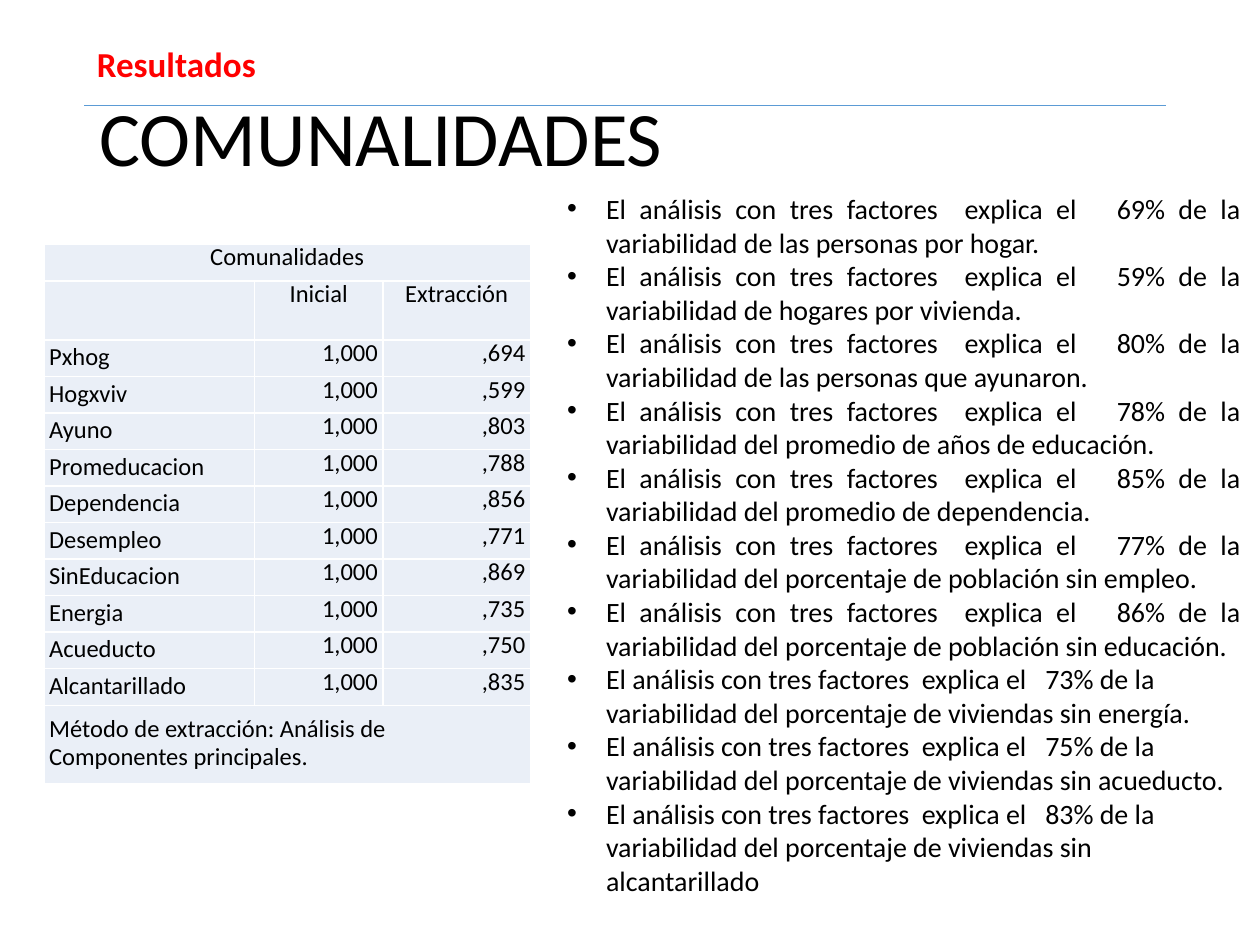
from lxml import etree
from pptx import Presentation
from pptx.dml.color import RGBColor
from pptx.enum.shapes import MSO_CONNECTOR
from pptx.enum.text import MSO_ANCHOR, MSO_AUTO_SIZE, PP_ALIGN
from pptx.oxml.ns import qn
from pptx.util import Inches, Pt

LEFT, CENTER, RIGHT, JUSTIFY = PP_ALIGN.LEFT, PP_ALIGN.CENTER, PP_ALIGN.RIGHT, PP_ALIGN.JUSTIFY
TOP, MIDDLE = MSO_ANCHOR.TOP, MSO_ANCHOR.MIDDLE
NO_FIT = MSO_AUTO_SIZE.NONE
STRAIGHT = MSO_CONNECTOR.STRAIGHT

FONT = "Calibri"
BLACK, RED, RULE_BLUE, CELL_BLUE = "000000", "FF0000", "5B9BD5", "EAEFF7"

COMMUNALITIES = [
    ("Pxhog", ",694"),
    ("Hogxviv", ",599"),
    ("Ayuno", ",803"),
    ("Promeducacion", ",788"),
    ("Dependencia", ",856"),
    ("Desempleo", ",771"),
    ("SinEducacion", ",869"),
    ("Energia", ",735"),
    ("Acueducto", ",750"),
    ("Alcantarillado", ",835"),
]
INITIAL = "1,000"
METHOD = "Método de extracción: Análisis de Componentes principales."

FINDING = "El análisis con tres factores  explica el   {}% de la variabilidad {}"
FINDINGS = [
    (69, "de las personas por hogar."),
    (59, "de hogares por vivienda."),
    (80, "de las personas que ayunaron."),
    (78, "del promedio de años de educación."),
    (85, "del promedio de dependencia."),
    (77, "del porcentaje de población sin empleo."),
    (86, "del porcentaje de población sin educación."),
    (73, "del porcentaje de viviendas sin energía."),
    (75, "del porcentaje de viviendas sin acueducto."),
    (83, "del porcentaje de viviendas sin alcantarillado"),
]
JUSTIFIED_FINDINGS = 7


def color(hex_string):
    return RGBColor.from_string(hex_string)


def place(shape, left, top, width, height):
    shape.left, shape.top = Inches(left), Inches(top)
    shape.width, shape.height = Inches(width), Inches(height)


def format_paragraph(paragraph, size, hex_string=BLACK, align=LEFT, bold=False):
    paragraph.alignment = align
    font = paragraph.font
    font.name, font.size, font.bold = FONT, Pt(size), bold
    font.color.rgb = color(hex_string)


def add_header(slide, left, top, width, height):
    """Section label with the rule below it."""
    label = slide.shapes.add_textbox(Inches(left), Inches(top), Inches(1.47), Inches(height))
    label.text_frame.word_wrap = False
    label.text_frame.text = "Resultados"
    format_paragraph(label.text_frame.paragraphs[0], 20, RED, bold=True)

    rule_top = Inches(top + height + 0.11)
    rule = slide.shapes.add_connector(
        STRAIGHT, Inches(left + width), rule_top, Inches(left), rule_top)
    rule.line.color.rgb = color(RULE_BLUE)
    rule.line.width = Pt(0.5)
    etree.SubElement(rule._element.spPr, qn("a:effectLst"))


def fill_title(title, left, top, width, height):
    place(title, left, top, width, height)
    frame = title.text_frame
    frame.text = "COMUNALIDADES"
    frame.vertical_anchor = MIDDLE
    frame.auto_size = NO_FIT
    paragraph = frame.paragraphs[0]
    format_paragraph(paragraph, 44)
    paragraph.line_spacing = 0.9


def write_cell(cell, text, align, anchor):
    cell.fill.solid()
    cell.fill.fore_color.rgb = color(CELL_BLUE)
    cell.margin_left = cell.margin_right = Inches(0.04)
    cell.margin_top = cell.margin_bottom = 0
    cell.vertical_anchor = anchor
    cell.text = text
    paragraph = cell.text_frame.paragraphs[0]
    format_paragraph(paragraph, 14, align=align)
    paragraph.line_spacing = Pt(16)


def add_communalities_table(slide, left, top):
    column_widths = [1.67, 1.02, 1.17]
    row_heights = [0.29, 0.47] + [0.29] * len(COMMUNALITIES) + [0.62]
    table = slide.shapes.add_table(
        len(row_heights), len(column_widths), Inches(left), Inches(top),
        Inches(sum(column_widths)), Inches(sum(row_heights))).table
    table.first_row = table.horz_banding = False
    for column, width in zip(table.columns, column_widths):
        column.width = Inches(width)
    for row, height in zip(table.rows, row_heights):
        row.height = Inches(height)

    last_row, last_column = len(row_heights) - 1, len(column_widths) - 1
    for row, text, align, anchor in [(0, "Comunalidades", CENTER, TOP),
                                     (last_row, METHOD, LEFT, MIDDLE)]:
        table.cell(row, 0).merge(table.cell(row, last_column))
        write_cell(table.cell(row, 0), text, align, anchor)
    for column, heading in enumerate(["", "Inicial", "Extracción"]):
        write_cell(table.cell(1, column), heading, CENTER, TOP)
    for row, (variable, extraction) in enumerate(COMMUNALITIES, start=2):
        write_cell(table.cell(row, 0), variable, LEFT, MIDDLE)
        write_cell(table.cell(row, 1), INITIAL, RIGHT, TOP)
        write_cell(table.cell(row, 2), extraction, RIGHT, TOP)


def fill_findings(body, left, top, width, height):
    place(body, left, top, width, height)
    frame = body.text_frame
    frame.auto_size = NO_FIT
    frame.vertical_anchor = TOP
    frame.text = "\n".join(FINDING.format(*finding) for finding in FINDINGS)
    for index, paragraph in enumerate(frame.paragraphs):
        format_paragraph(paragraph, 16, align=JUSTIFY if index < JUSTIFIED_FINDINGS else LEFT)
        paragraph.space_before = Pt(0)
        properties = paragraph._p.get_or_add_pPr()
        properties.set("marL", str(Inches(0.31)))
        properties.set("indent", str(-Inches(0.31)))


def main():
    presentation = Presentation()
    presentation.slide_width, presentation.slide_height = Inches(10), Inches(7.5)
    slide = presentation.slides.add_slide(presentation.slide_layouts[1])
    fill_title(slide.shapes.title, 0.69, 0.4, 8.62, 1.45)
    add_communalities_table(slide, 0.35, 1.94)
    fill_findings(slide.placeholders[1], 4.4, 1.47, 5.55, 6.63)
    add_header(slide, 0.67, 0.29, 8.58, 0.44)
    presentation.save("out.pptx")


if __name__ == "__main__":
    main()
